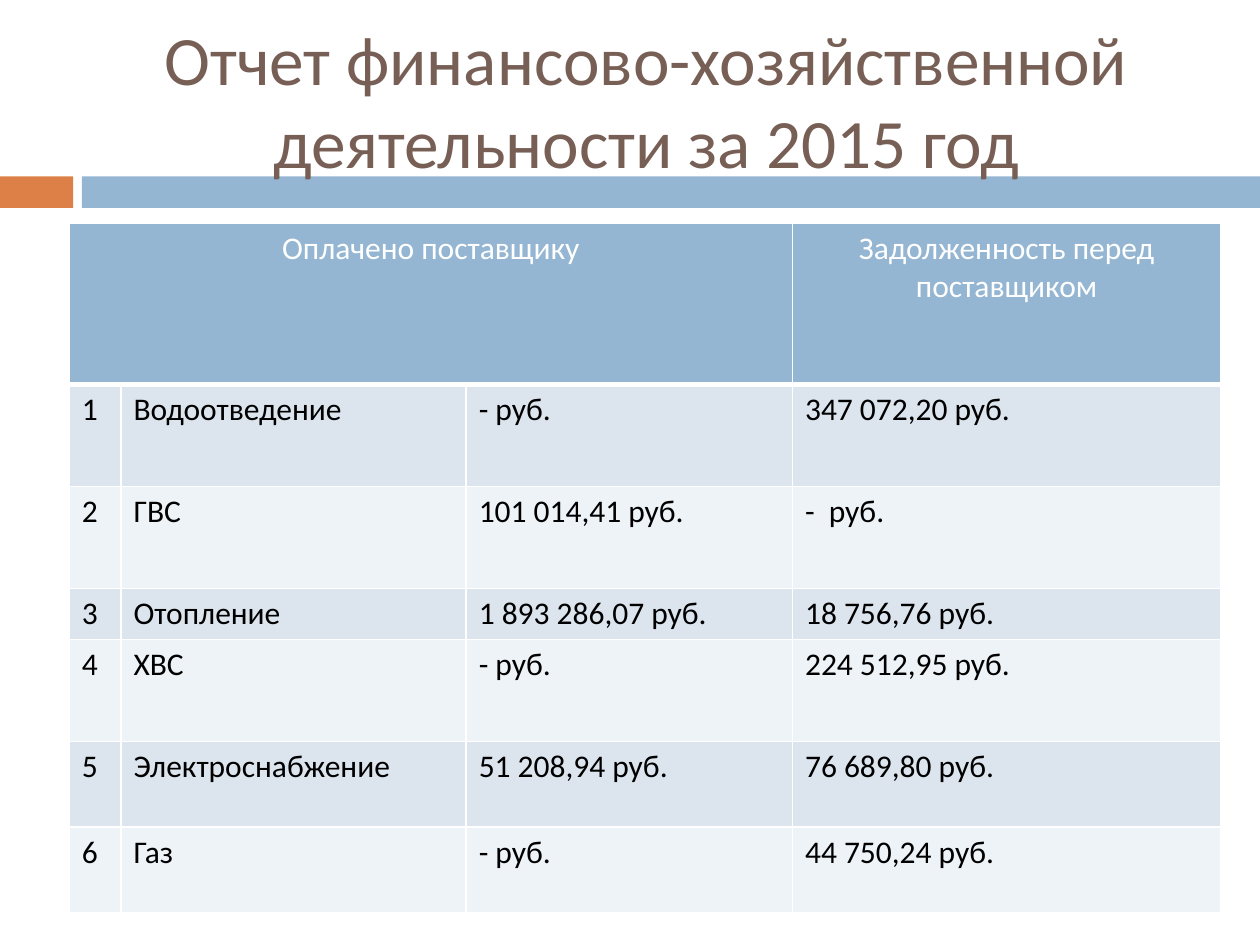
from lxml import etree
from pptx import Presentation
from pptx.dml.color import RGBColor
from pptx.enum.shapes import MSO_SHAPE
from pptx.enum.text import MSO_ANCHOR, MSO_AUTO_SIZE, PP_ALIGN
from pptx.oxml.ns import qn
from pptx.util import Inches, Pt

RECTANGLE = MSO_SHAPE.RECTANGLE
MIDDLE = MSO_ANCHOR.MIDDLE
NO_FIT = MSO_AUTO_SIZE.NONE
CENTER, LEFT = PP_ALIGN.CENTER, PP_ALIGN.LEFT

COLORS = {
    "accent": "DD8047", "blue": "94B6D2", "title": "775F55",
    "band_dark": "DCE5EE", "band_light": "EEF3F7",
    "white": "FFFFFF", "black": "000000",
}
COLUMNS = [0.41, 2.74, 2.59, 3.4]
ROWS = [1.28, 0.81, 0.81, 0.39, 0.81, 0.68, 0.68]
HEADER = ["Оплачено поставщику", "", "", "Задолженность перед поставщиком"]
SERVICES = [
    ("Водоотведение", "- руб.", "347 072,20 руб."),
    ("ГВС", "101 014,41 руб.", "-  руб."),
    ("Отопление", "1 893 286,07 руб.", "18 756,76 руб."),
    ("ХВС", "- руб.", "224 512,95 руб."),
    ("Электроснабжение", "51 208,94 руб.", "76 689,80 руб."),
    ("Газ", "- руб.", "44 750,24 руб."),
]


def write_text(frame, text, size, color, align):
    para = frame.paragraphs[0]
    para.alignment = align
    span = para.add_run()
    span.text = text
    formats = {"name": "Calibri", "size": Pt(size), "bold": False}
    for name, value in formats.items():
        setattr(span.font, name, value)
    span.font.color.rgb = RGBColor.from_string(COLORS[color])


def add_borders(cell, bottom_width):
    properties = cell._tc.get_or_add_tcPr()
    widths = {"a:lnL": 1, "a:lnR": 1, "a:lnT": 1, "a:lnB": bottom_width}
    for position, (tag, width) in enumerate(widths.items()):
        line = etree.Element(qn(tag), w=str(Pt(width)))
        fill = etree.SubElement(line, qn("a:solidFill"))
        etree.SubElement(fill, qn("a:srgbClr"), val=COLORS["white"])
        properties.insert(position, line)


deck = Presentation()
deck.slide_width, deck.slide_height = Inches(10), Inches(7.5)
page = deck.slides.add_slide(deck.slide_layouts[5])

# Bars under the title
for left, width, color in [(0, 0.58, "accent"), (0.65, 9.35, "blue")]:
    bar = page.shapes.add_shape(
        RECTANGLE, Inches(left), Inches(1.4), Inches(width), Inches(0.25))
    bar.shadow.inherit = False
    bar.fill.solid()
    bar.fill.fore_color.rgb = RGBColor.from_string(COLORS[color])
    bar.line.fill.background()

# Title, in front of the bars
title = page.shapes.title
page.shapes._spTree.append(title._element)
bounds = {"left": 0.67, "top": 0.25, "width": 8.92, "height": 1.08}
for name, value in bounds.items():
    setattr(title, name, Inches(value))
frame_formats = {"word_wrap": True, "auto_size": NO_FIT, "vertical_anchor": MIDDLE}
for name, value in frame_formats.items():
    setattr(title.text_frame, name, value)
write_text(title.text_frame, "Отчет финансово-хозяйственной деятельности за 2015 год",
           39.6, "title", CENTER)

# Table of payments and debts
table = page.shapes.add_table(
    len(ROWS), len(COLUMNS), Inches(0.55), Inches(1.77),
    Inches(sum(COLUMNS)), Inches(sum(ROWS))).table
table.first_row = table.horz_banding = False
for column, width in zip(table.columns, COLUMNS):
    column.width = Inches(width)
for row, height in zip(table.rows, ROWS):
    row.height = Inches(height)
table.cell(0, 0).merge(table.cell(0, 2))

content = [HEADER] + [(str(number), *service)
                      for number, service in enumerate(SERVICES, 1)]
for row_index, texts in enumerate(content):
    if row_index == 0:
        fill, color, align, bottom = "blue", "white", CENTER, 3
    else:
        fill = "band_dark" if row_index % 2 else "band_light"
        color, align, bottom = "black", LEFT, 1
    for column_index, text in enumerate(texts):
        cell = table.cell(row_index, column_index)
        cell.fill.solid()
        cell.fill.fore_color.rgb = RGBColor.from_string(COLORS[fill])
        add_borders(cell, bottom)
        if text:
            write_text(cell.text_frame, text, 18, color, align)

deck.save("out.pptx")
